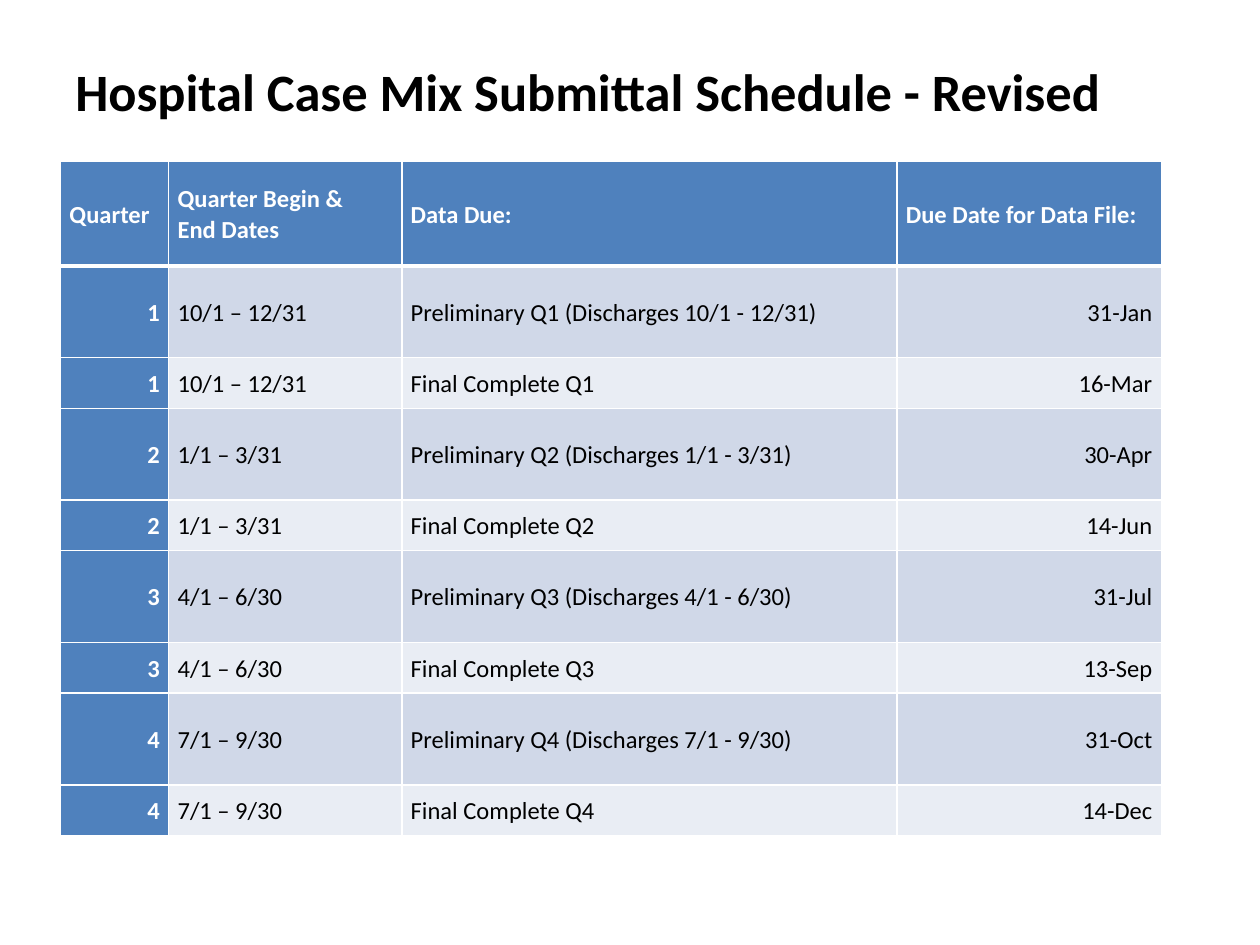
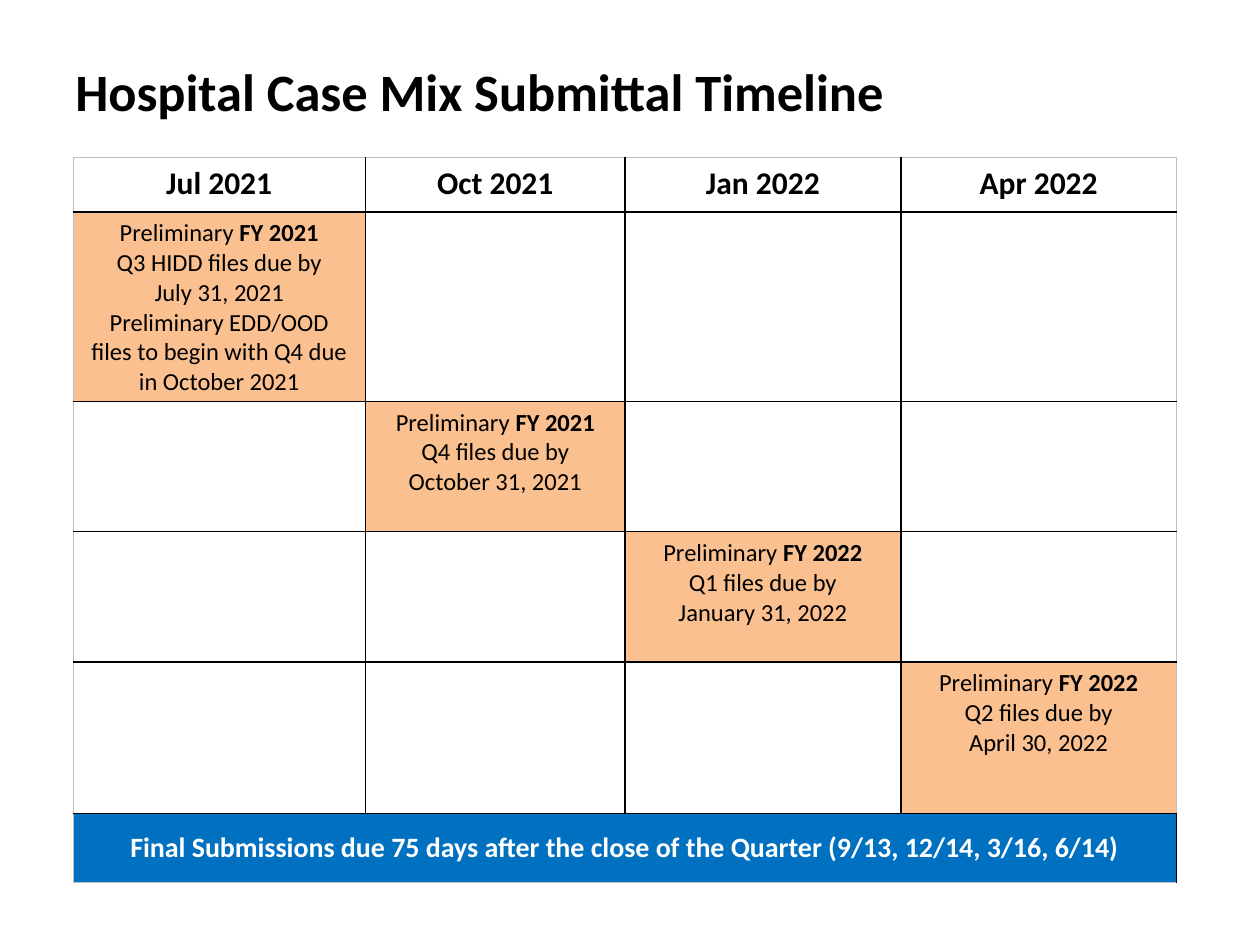
from dataclasses import dataclass

from lxml import etree
from pptx import Presentation
from pptx.dml.color import RGBColor
from pptx.enum.text import MSO_ANCHOR, MSO_AUTO_SIZE, PP_ALIGN
from pptx.oxml.ns import qn
from pptx.util import Cm, Pt

LEFT, MID, RIGHT = PP_ALIGN.LEFT, PP_ALIGN.CENTER, PP_ALIGN.RIGHT
TOP, CENTER = MSO_ANCHOR.TOP, MSO_ANCHOR.MIDDLE
GROW = MSO_AUTO_SIZE.SHAPE_TO_FIT_TEXT


@dataclass(frozen=True)
class Theme:
    font: str = "Calibri"
    black: str = "000000"
    white: str = "FFFFFF"
    blue: str = "4F81BD"
    bands: tuple = ("D0D8E8", "E9EDF4")
    peach: str = "FAC090"
    final: str = "0070C0"
    edge: str = "BFBFBF"
    title: int = 30
    month: int = 18
    note: int = 16
    body: int = 14


THEME = Theme()

QUARTERS = [
    ("10/1", "12/31", "31-Jan", "16-Mar"),
    ("1/1", "3/31", "30-Apr", "14-Jun"),
    ("4/1", "6/30", "31-Jul", "13-Sep"),
    ("7/1", "9/30", "31-Oct", "14-Dec"),
]
HEADS = ["Quarter", "Quarter Begin &\vEnd Dates", "Data Due:", "Due Date for Data File:"]

MONTHS = ["Jul 2021", "Oct 2021", "Jan 2022", "Apr 2022"]
# Fiscal year and the lines below it, one entry for each month
STEPS = [
    ("FY 2021", ["Q3 HIDD files due by", "July 31, 2021", "Preliminary EDD/OOD",
                 "files to begin with Q4 due in October 2021"]),
    ("FY 2021", ["Q4 files due by", "October 31, 2021"]),
    ("FY 2022", ["Q1 files due by", "January 31, 2022"]),
    ("FY 2022", ["Q2 files due by", "April 30, 2022"]),
]
FINAL = ("Final Submissions due 75 days after the close of the Quarter "
         "(9/13, 12/14, 3/16, 6/14)")


def apply(item, values):
    """Set each named attribute of the item."""
    for name, value in values.items():
        setattr(item, name, value)


def write(frame, lines, size, color=THEME.black, bold=False, **layout):
    """Fill a frame; a line is a string or a list of (text, bold) runs."""
    for i, line in enumerate(lines):
        para = frame.add_paragraph() if i else frame.paragraphs[0]
        apply(para, layout)
        for text, heavy in [(line, bold)] if isinstance(line, str) else line:
            for j, part in enumerate(text.split("\v")):
                if j:
                    para.add_line_break()
                run = para.add_run()
                run.text = part
                apply(run.font, {"name": THEME.font, "size": Pt(size), "bold": heavy})
                run.font.color.rgb = RGBColor.from_string(color)


def add_title(slide, text):
    box = slide.shapes.add_textbox(Cm(1.27), Cm(1.07), Cm(21.59), Cm(1.55))
    apply(box.text_frame, {"word_wrap": True, "auto_size": GROW})
    write(box.text_frame, [text], THEME.title, bold=True)


def add_grid(slide, left, top, cols, rows):
    """Add a table with the given column widths and row heights in cm."""
    frame = slide.shapes.add_table(len(rows), len(cols), Cm(left), Cm(top),
                                   Cm(sum(cols)), Cm(sum(rows)))
    grid = frame.table
    apply(grid, {"first_row": False, "horz_banding": False})
    for col, width in zip(grid.columns, cols):
        col.width = Cm(width)
    for row, height in zip(grid.rows, rows):
        row.height = Cm(height)
    return grid


def format_cell(cell, fill, sides, pad, anchor):
    """Draw the sides L, R, T, B as (colour, points), then fill and pad."""
    props = cell._tc.get_or_add_tcPr()
    for side in "LRTB":
        color, width = sides[side]
        line = etree.SubElement(props, qn(f"a:ln{side}"), w=str(Pt(width)))
        solid = etree.SubElement(line, qn("a:solidFill"))
        etree.SubElement(solid, qn("a:srgbClr"), val=color)
    cell.fill.solid()
    cell.fill.fore_color.rgb = RGBColor.from_string(fill)
    across, down = Cm(pad[0]), Cm(pad[1])
    apply(cell, {"margin_left": across, "margin_right": across, "margin_top": down,
                 "margin_bottom": down, "vertical_anchor": anchor})


def list_dues():
    """Return a preliminary and a final row for each quarter."""
    rows = []
    for i, (start, end, early, late) in enumerate(QUARTERS, 1):
        span = f"{start} – {end}"
        rows.append([str(i), span, f"Preliminary Q{i} (Discharges {start} - {end})", early])
        rows.append([str(i), span, f"Final Complete Q{i}", late])
    return rows


def draw_schedule(slide):
    add_title(slide, "Hospital Case Mix Submittal Schedule - Revised")
    grid = add_grid(slide, 1.22, 3.25, [2.18, 4.7, 9.98, 5.33], [2.11] + [1.85, 1.02] * 4)
    for r, row in enumerate([HEADS] + list_dues()):
        for c, text in enumerate(row):
            cell = grid.cell(r, c)
            head = r == 0 or c == 0
            sides = dict.fromkeys("LRTB", (THEME.white, 1))
            if r < 2:
                sides["T" if r else "B"] = (THEME.white, 3)
            fill = THEME.blue if head else THEME.bands[(r - 1) % 2]
            format_cell(cell, fill, sides, (0.18, 0), CENTER)
            write(cell.text_frame, [text], THEME.body,
                  THEME.white if head else THEME.black, head,
                  alignment=RIGHT if r and c in (0, 3) else LEFT, line_spacing=1.07)


def draw_timeline(slide):
    add_title(slide, "Hospital Case Mix Submittal Timeline")
    cols, rows = [5.9, 5.23, 5.56, 5.56], [1.09, 3.81, 2.63, 2.63, 3.05, 1.4]
    grid = add_grid(slide, 1.47, 3.18, cols, rows)
    last, end = len(rows) - 1, len(cols) - 1
    for r in range(len(rows)):
        for c in range(len(cols)):
            outer = {"L": c == 0, "R": c == end, "T": r == 0, "B": r == last}
            sides = {side: (THEME.edge, 0.5) if out else (THEME.black, 1)
                     for side, out in outer.items()}
            fill = THEME.final if r == last else THEME.peach if r == c + 1 else THEME.white
            format_cell(grid.cell(r, c), fill, sides, (0.25, 0.13),
                        CENTER if r == last else TOP)
    for c, (month, (year, lines)) in enumerate(zip(MONTHS, STEPS)):
        write(grid.cell(0, c).text_frame, [month], THEME.month, bold=True, alignment=MID)
        write(grid.cell(c + 1, c).text_frame,
              [[("Preliminary ", False), (year, True)]] + lines, THEME.body, alignment=MID)
    grid.cell(last, 0).merge(grid.cell(last, end))
    write(grid.cell(last, 0).text_frame, [FINAL], THEME.note, THEME.white, True,
          alignment=MID)


def main():
    deck = Presentation()
    apply(deck, {"slide_width": Cm(25.4), "slide_height": Cm(19.05)})
    for draw in (draw_schedule, draw_timeline):
        draw(deck.slides.add_slide(deck.slide_layouts[6]))
    deck.save("out.pptx")


if __name__ == "__main__":
    main()
